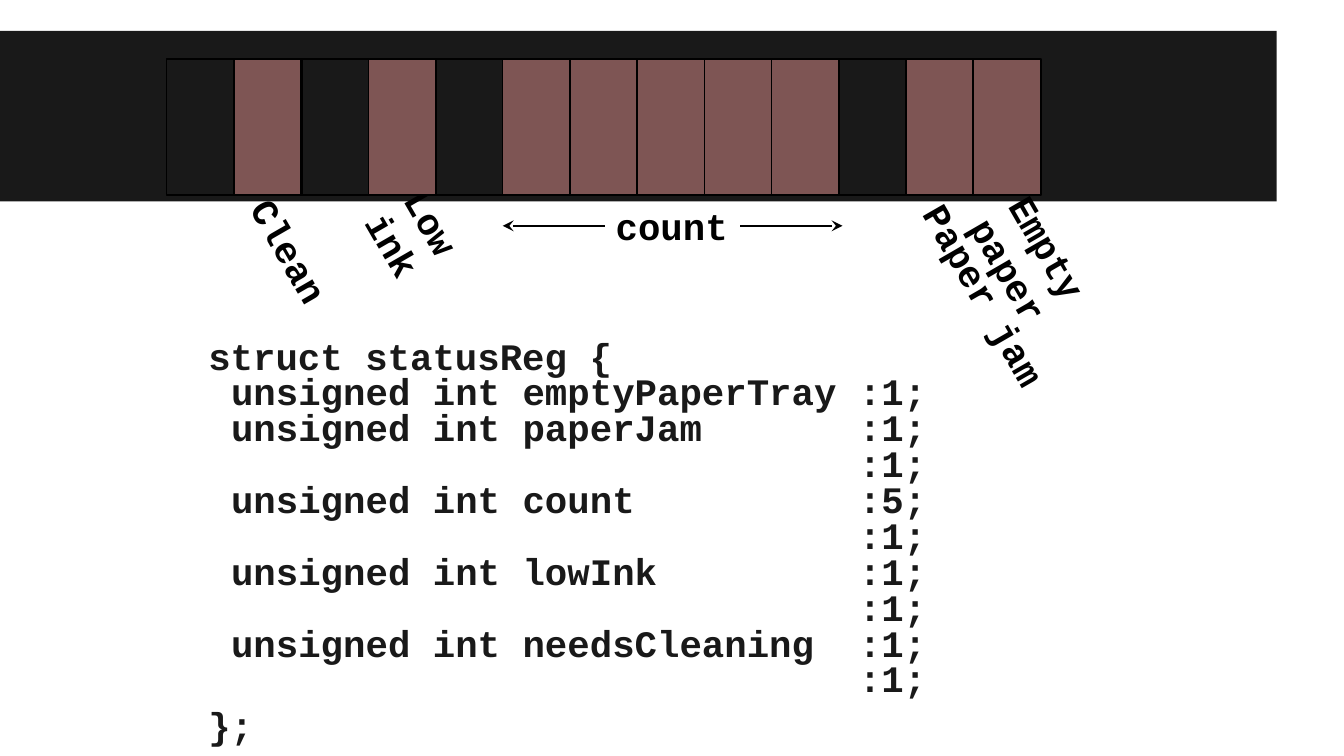
from lxml import etree
from pptx import Presentation
from pptx.dml.color import RGBColor
from pptx.enum import shapes, text
from pptx.oxml import ns
from pptx.util import Pt

COLORS = {"band": "191919", "used": "7E5554", "ink": "000000", "code": "191919"}
FONT = "Courier New"
BIT_COUNT = 13
BIT_PITCH = 36
USED_BITS = {1, 3, 5, 6, 7, 8, 9, 11, 12}
FIELDS = [
    ("emptyPaperTray", 1), ("paperJam", 1), ("", 1), ("count", 5), ("", 1),
    ("lowInk", 1), ("", 1), ("needsCleaning", 1), ("", 1),
]
LABELS = [
    ("Empty paper", (506.2, 140.4, 120.2, 48.2)),
    ("Paper jam", (466.6, 157.7, 136.1, 24.5)),
    ("Low ink", (193, 118.8, 77, 48.2)),
    ("Clean", (122.4, 127.4, 72, 24.5)),
]


def rgb(name):
    return RGBColor.from_string(COLORS[name])


def style(paragraph, color):
    paragraph.font.name = FONT
    paragraph.font.size = Pt(20)
    paragraph.font.bold = True
    paragraph.font.color.rgb = rgb(color)


def add_rect(parent, box, fill=None, outlined=True):
    rect = parent.add_shape(shapes.MSO_SHAPE.RECTANGLE, *map(Pt, box))
    rect.shadow.inherit = False
    if fill:
        rect.fill.solid()
        rect.fill.fore_color.rgb = rgb(fill)
    else:
        rect.fill.background()
    if outlined:
        rect.line.color.rgb = rgb("ink")
        rect.line.width = Pt(0.75)
    else:
        rect.line.fill.background()


def add_label(parent, words, box, angle=0):
    label = parent.add_textbox(*map(Pt, box))
    label.rotation = angle
    frame = label.text_frame
    frame.word_wrap = True
    frame.auto_size = text.MSO_AUTO_SIZE.SHAPE_TO_FIT_TEXT
    frame.vertical_anchor = text.MSO_ANCHOR.MIDDLE
    frame.margin_left = frame.margin_right = 0
    frame.margin_top = frame.margin_bottom = 0
    frame.text = words
    style(frame.paragraphs[0], "ink")


def add_arrow(parent, start, end, y):
    arrow = parent.add_connector(
        shapes.MSO_CONNECTOR.STRAIGHT, Pt(start), Pt(y), Pt(end), Pt(y))
    arrow.line.color.rgb = rgb("ink")
    arrow.line.width = Pt(0.75)
    etree.SubElement(arrow.line._get_or_add_ln(), ns.qn("a:tailEnd"), type="stealth")
    etree.SubElement(arrow._element.spPr, ns.qn("a:effectLst"))


def add_register(parent, box):
    left, top, width, height = box
    bit_width = width - (BIT_COUNT - 1) * BIT_PITCH
    for bit in range(BIT_COUNT):
        fill = "used" if bit in USED_BITS else None
        add_rect(parent, (left + bit * BIT_PITCH, top, bit_width, height), fill)


def add_count_span(parent, box):
    left, top, width, height = box
    span = parent.add_group_shape().shapes
    middle = top + height / 2
    arrow_length = 54.7
    add_label(span, "count", (left + 60.5, top, 60.5, height))
    add_arrow(span, left + arrow_length, left, middle)
    add_arrow(span, left + width - arrow_length, left + width, middle)


def add_code(parent, box):
    frame = parent.add_textbox(*map(Pt, box)).text_frame
    frame.word_wrap = True
    frame.margin_left = frame.margin_right = Pt(7.2)
    frame.margin_top = frame.margin_bottom = Pt(7.2)
    lines = ["struct statusReg {"]
    for name, bits in FIELDS:
        declaration = f"unsigned int {name}" if name else ""
        lines.append(f"{declaration:<28}:{bits};")
    frame.text = "\v".join(lines)
    frame.add_paragraph().text = "};"
    for paragraph in frame.paragraphs:
        style(paragraph, "code")
        paragraph.line_spacing = 0.8
        paragraph.space_before = Pt(6)
        properties = paragraph._p.get_or_add_pPr()
        properties.set("marL", str(Pt(27.4)))
        properties.set("indent", str(Pt(-12.2)))


def main():
    deck = Presentation()
    deck.slide_width, deck.slide_height = Pt(720), Pt(405)
    parts = deck.slides.add_slide(deck.slide_layouts[6]).shapes
    add_rect(parts, (0, 16.6, 684, 91.4), "band", outlined=False)
    add_code(parts, (89.3, 175.7, 618.5, 197.3))
    for words, box in LABELS:
        add_label(parts, words, box, 60)
    add_register(parts, (89.3, 31.7, 468.5, 72.7))
    add_count_span(parts, (269.3, 110.2, 182.1, 21.6))
    deck.save("out.pptx")


if __name__ == "__main__":
    main()
